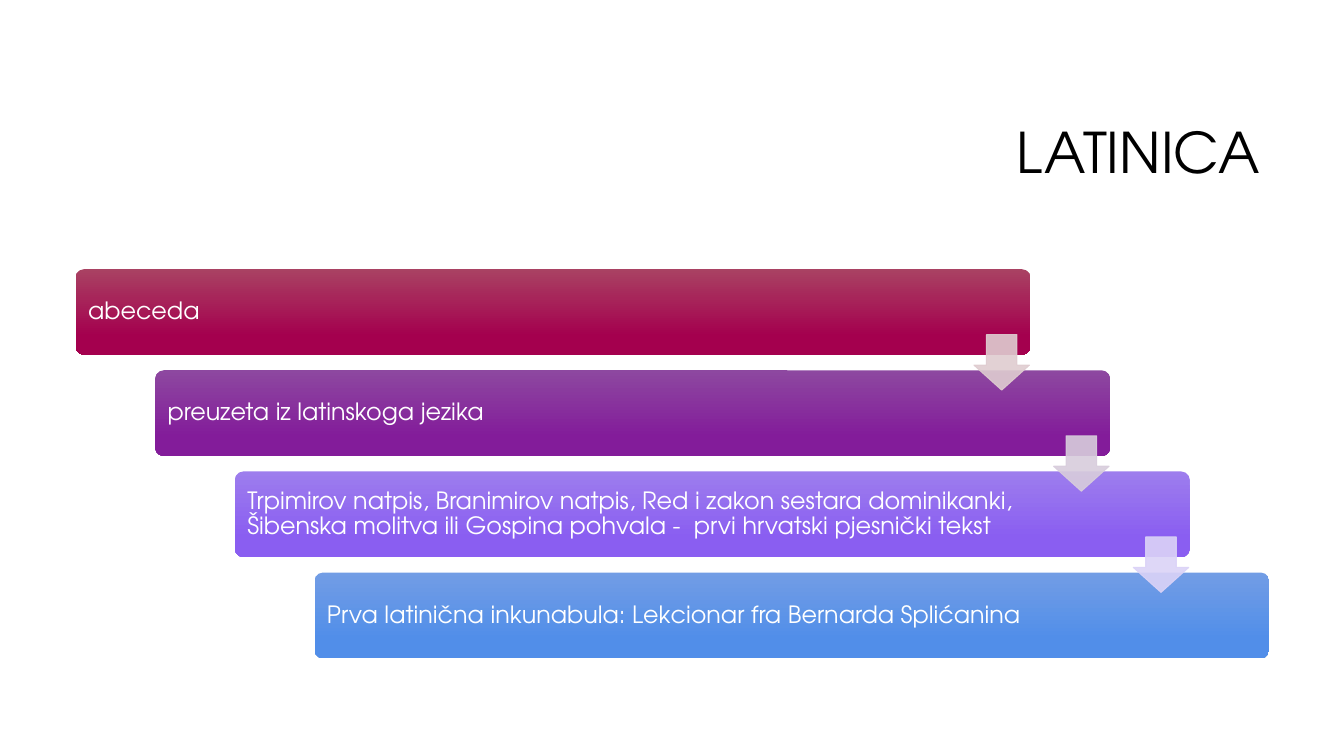
"""Build the LATINICA slide: a staircase of four bars joined by arrows."""
from lxml import etree
from pptx import Presentation
from pptx.dml.color import RGBColor
from pptx.enum.shapes import MSO_SHAPE
from pptx.enum.text import MSO_ANCHOR, PP_ALIGN
from pptx.oxml.ns import qn
from pptx.util import Inches, Pt

ROUNDED = MSO_SHAPE.ROUNDED_RECTANGLE
DOWN_ARROW = MSO_SHAPE.DOWN_ARROW
MIDDLE = MSO_ANCHOR.MIDDLE
LEFT, RIGHT = PP_ALIGN.LEFT, PP_ALIGN.RIGHT
FONT = "TeX Gyre Adventor"
BLACK = RGBColor(0x00, 0x00, 0x00)
WHITE = RGBColor(0xFF, 0xFF, 0xFF)

BARS = [
    ("abeceda", RGBColor(0xA9, 0x42, 0x63), RGBColor(0xA4, 0x00, 0x4E)),
    ("preuzeta iz latinskoga jezika",
     RGBColor(0x8D, 0x48, 0xA0), RGBColor(0x83, 0x1C, 0x9A)),
    ("Trpimirov natpis, Branimirov natpis, Red i zakon sestara dominikanki, "
     "Šibenska molitva ili Gospina pohvala -  prvi hrvatski pjesnički tekst",
     RGBColor(0x9D, 0x7D, 0xED), RGBColor(0x8A, 0x5E, 0xF1)),
    ("Prva latinična inkunabula: Lekcionar fra Bernarda Splićanina",
     RGBColor(0x72, 0x9D, 0xE5), RGBColor(0x51, 0x8E, 0xE9)),
]
ARROWS = [
    RGBColor(0xDF, 0xCC, 0xD0),
    RGBColor(0xD8, 0xCD, 0xDC),
    RGBColor(0xDB, 0xD3, 0xF7),
]
BAR_LEFT, BAR_TOP, BAR_W, BAR_H = 0.75, 2.67, 9.47, 0.85
STEP_X, STEP_Y = 0.79, 3.01 / 3
ARROW_DX, ARROW_DY, ARROW_SIZE = 8.91, 0.65, 0.55


def write_text(s, text, size, color, align):
    tf = s.text_frame
    tf.word_wrap = True
    tf.vertical_anchor = MIDDLE
    p = tf.paragraphs[0]
    p.text = text
    p.alignment = align
    p.line_spacing = 0.9
    p.font.name = FONT
    p.font.size = Pt(size)
    p.font.color.rgb = color
    return tf


prs = Presentation()
prs.slide_width, prs.slide_height = Inches(13.33), Inches(7.5)
slide = prs.slides.add_slide(prs.slide_layouts[6])

title = slide.shapes.add_textbox(Inches(3.17), Inches(0.84), Inches(9.42), Inches(1.41))
write_text(title, "LATINICA", 40, BLACK, RIGHT)

for i, (text, top_color, bottom_color) in enumerate(BARS):
    bar = slide.shapes.add_shape(
        ROUNDED, Inches(BAR_LEFT + i * STEP_X), Inches(BAR_TOP + i * STEP_Y),
        Inches(BAR_W), Inches(BAR_H))
    bar.adjustments[0] = 0.1
    bar.shadow.inherit = False
    bar.line.fill.background()
    bar.fill.gradient()
    bar.fill.gradient_angle = 270
    start, end = bar.fill.gradient_stops
    start.color.rgb, start.position = top_color, 0
    end.color.rgb, end.position = bottom_color, 0.78
    tf = write_text(bar, text, 17, WHITE, LEFT)
    tf.margin_left, tf.margin_right = Inches(0.1), Inches(1.44)
    tf.margin_top = tf.margin_bottom = Inches(0.07)

for i, color in enumerate(ARROWS):
    arrow = slide.shapes.add_shape(
        DOWN_ARROW, Inches(BAR_LEFT + ARROW_DX + i * STEP_X),
        Inches(BAR_TOP + ARROW_DY + i * STEP_Y), Inches(ARROW_SIZE), Inches(ARROW_SIZE))
    arrow.adjustments[0], arrow.adjustments[1] = 0.45, 0.55
    arrow.adjustments[0], arrow.adjustments[1] = 0.55, 0.45
    arrow.shadow.inherit = False
    arrow.fill.solid()
    arrow.fill.fore_color.rgb = color
    arrow.line.color.rgb = color
    arrow.line.width = Pt(0.75)
    for clr in arrow.element.spPr.iter(qn("a:srgbClr")):
        etree.SubElement(clr, qn("a:alpha")).set("val", "90000")

prs.save("out.pptx")
